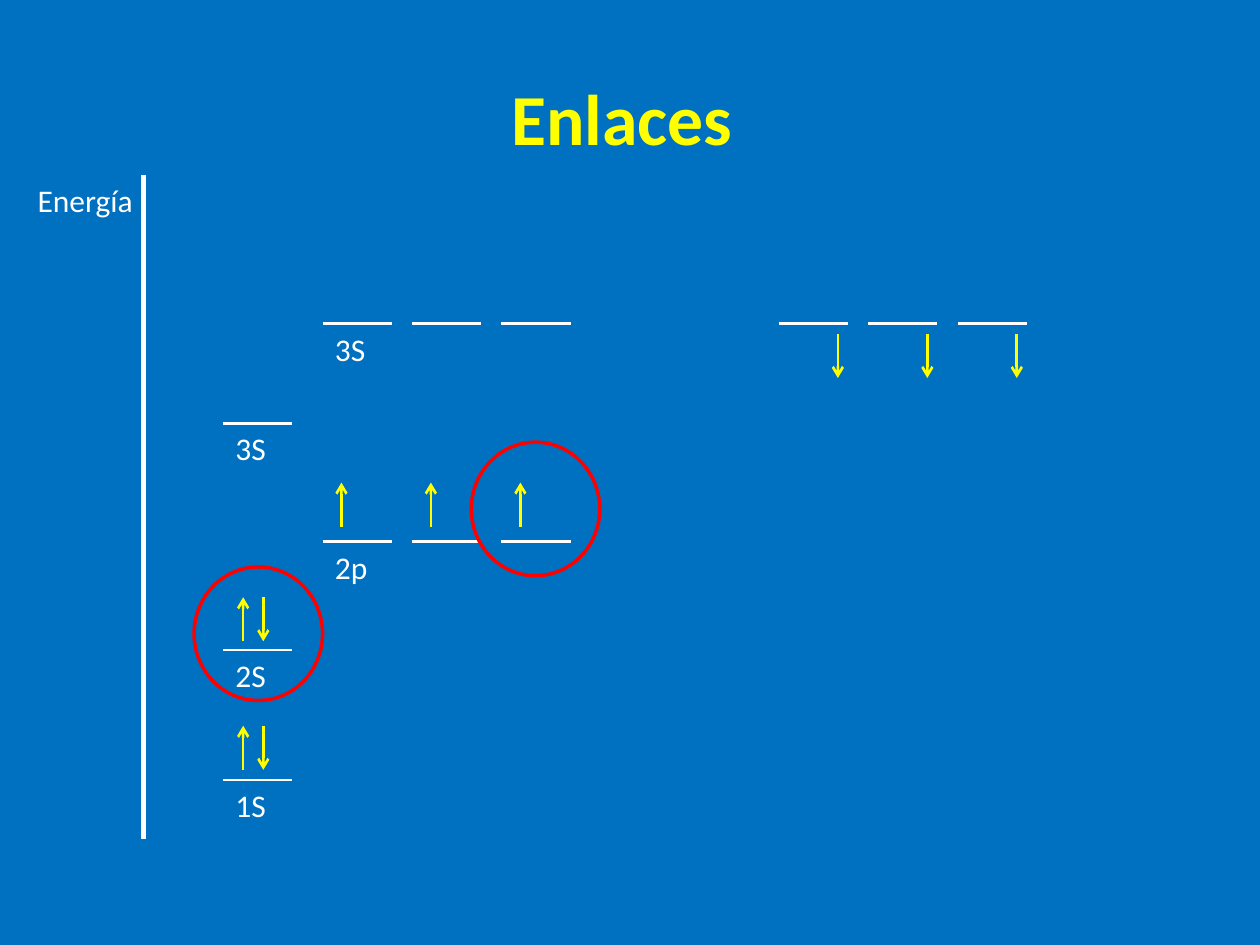
from lxml import etree
from pptx import Presentation
from pptx.dml.color import RGBColor
from pptx.enum.shapes import MSO_CONNECTOR, MSO_SHAPE
from pptx.enum.text import MSO_ANCHOR, MSO_AUTO_SIZE, PP_ALIGN
from pptx.oxml.ns import qn
from pptx.util import Inches, Pt

LINE = MSO_CONNECTOR.STRAIGHT
OVAL = MSO_SHAPE.OVAL
MIDDLE = MSO_ANCHOR.MIDDLE
GROW = MSO_AUTO_SIZE.SHAPE_TO_FIT_TEXT
CENTER = PP_ALIGN.CENTER

WHITE, YELLOW, RED, BLUE = "FFFFFF", "FFFF00", "FF0000", "0070C0"
S_COL, P_COL, RIGHT_COL = 1.77, 2.56, 6.18
STEP, WIDTH, SPIN = 0.71, 0.55, 0.35
LEVELS = [
    ("1S", S_COL, 6.19, 1),
    ("2S", S_COL, 5.16, 1),
    ("3S", S_COL, 3.36, 1),
    ("2p", P_COL, 4.3, 3),
    ("3S", P_COL, 2.57, 3),
    ("", RIGHT_COL, 2.57, 3),
]
PAIRS = [5.76, 4.74]
RINGS = [(1.54, 4.5), (3.74, 3.51)]


def color(code):
    """Turn a hex string into a colour."""
    return RGBColor.from_string(code)


def add_text(slide, text, box, size, code):
    """Add a text box and return its frame."""
    frame = slide.shapes.add_textbox(*map(Inches, box)).text_frame
    frame.text = text
    font = frame.paragraphs[0].font
    font.name, font.size = "Calibri", Pt(size)
    font.color.rgb = color(code)
    return frame


def add_title(slide, text):
    """Add the bold centred heading."""
    frame = add_text(slide, text, (0.5, 0.3, 9, 1.25), 41, YELLOW)
    frame.word_wrap = True
    frame.vertical_anchor = MIDDLE
    frame.paragraphs[0].alignment = CENTER
    frame.paragraphs[0].font.bold = True


def add_label(slide, text, x, y, width=0.47):
    """Add a small label that fits its text."""
    frame = add_text(slide, text, (x, y, width, 0.4), 18, WHITE)
    frame.word_wrap = False
    frame.auto_size = GROW


def add_line(slide, start, end, code=WHITE, weight=1.5):
    """Add a straight line without shadow."""
    line = slide.shapes.add_connector(LINE, *map(Inches, start + end))
    line.line.color.rgb = color(code)
    line.line.width = Pt(weight)
    etree.SubElement(line._element.spPr, qn("a:effectLst"))
    return line


def add_spin(slide, x, top, up):
    """Add an electron arrow that points up or down."""
    ends = [(x, top), (x, top + SPIN)]
    start, end = reversed(ends) if up else ends
    line = add_line(slide, start, end, YELLOW)
    tip = etree.SubElement(line.line._get_or_add_ln(), qn("a:tailEnd"))
    tip.set("type", "arrow")


def add_level(slide, name, left, y, count):
    """Add the orbitals of one energy level and its name."""
    if name:
        add_label(slide, name, left, y)
    for i in range(count):
        x = left + i * STEP
        add_line(slide, (x, y), (x + WIDTH, y))


def add_ring(slide, x, y):
    """Add a red ring around an orbital."""
    ring = slide.shapes.add_shape(OVAL, *map(Inches, (x, y, 1.02, 1.06)))
    ring.shadow.inherit = False
    ring.fill.background()
    ring.line.color.rgb = color(RED)
    ring.line.width = Pt(2)


def main():
    """Build the slide of energy levels."""
    deck = Presentation()
    deck.slide_width, deck.slide_height = Inches(10), Inches(7.5)
    slide = deck.slides.add_slide(deck.slide_layouts[6])
    slide.background.fill.solid()
    slide.background.fill.fore_color.rgb = color(BLUE)

    add_title(slide, "Enlaces ")
    add_line(slide, (1.14, 1.39), (1.14, 6.66), weight=3)
    add_label(slide, "Energía", 0.2, 1.39, 0.97)
    for level in LEVELS:
        add_level(slide, *level)
    for top in PAIRS:
        add_spin(slide, S_COL + 0.16, top, True)
        add_spin(slide, S_COL + 0.32, top, False)
    for i in range(3):
        add_spin(slide, P_COL + 0.15 + i * STEP, 3.83, True)
        add_spin(slide, RIGHT_COL + 0.47 + i * STEP, 2.65, False)
    for spot in RINGS:
        add_ring(slide, *spot)
    deck.save("out.pptx")


if __name__ == "__main__":
    main()
